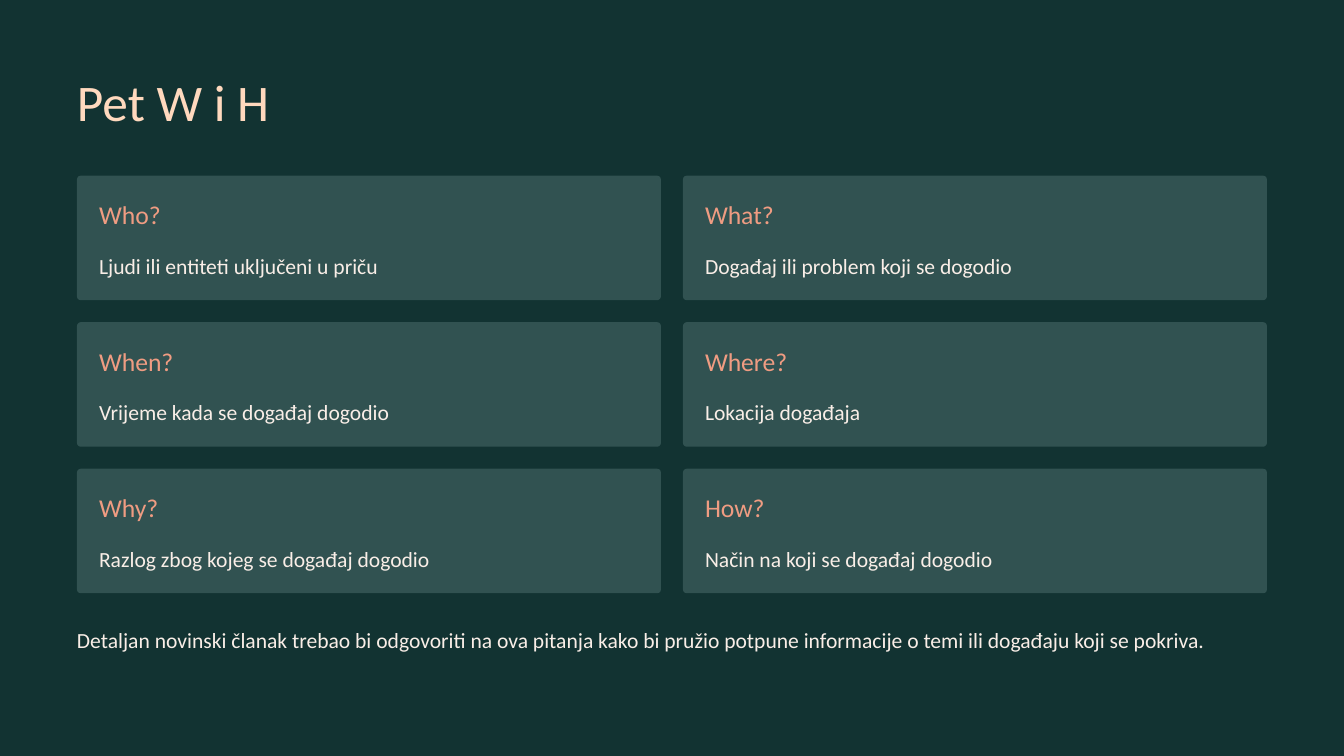
from dataclasses import dataclass

from pptx import Presentation
from pptx.dml.color import RGBColor
from pptx.enum.shapes import MSO_SHAPE
from pptx.enum.text import MSO_ANCHOR, MSO_AUTO_SIZE, PP_ALIGN
from pptx.slide import Slide
from pptx.text.text import TextFrame
from pptx.util import Pt

BACKGROUND = RGBColor(0x12, 0x33, 0x32)
CARD_FILL = RGBColor(0x31, 0x52, 0x51)
PEACH = RGBColor(0xFF, 0xD9, 0xBE)
CORAL = RGBColor(0xEF, 0x9C, 0x82)
CREAM = RGBColor(0xF9, 0xEE, 0xE7)

FONT = "Calibri"
MARGIN = 66
CARDS_TOP = 150.6
CARD_WIDTH, CARD_HEIGHT = 500.5, 106.7
GAP = 18.9
COLUMNS = 2


@dataclass(frozen=True)
class TextStyle:
    size: float
    line: float
    color: RGBColor


@dataclass(frozen=True)
class Card:
    question: str
    answer: str


TITLE = TextStyle(44, 55, PEACH)
HEADING = TextStyle(22, 27.5, CORAL)
BODY = TextStyle(18.5, 30, CREAM)

CARDS = [
    Card("Who?", "Ljudi ili entiteti uključeni u priču"),
    Card("What?", "Događaj ili problem koji se dogodio"),
    Card("When?", "Vrijeme kada se događaj dogodio"),
    Card("Where?", "Lokacija događaja"),
    Card("Why?", "Razlog zbog kojeg se događaj dogodio"),
    Card("How?", "Način na koji se događaj dogodio"),
]
SUMMARY = (
    "Detaljan novinski članak trebao bi odgovoriti na ova pitanja kako bi "
    "pružio potpune informacije o temi ili događaju koji se pokriva."
)


def write_text(tf: TextFrame, text: str, style: TextStyle) -> None:
    tf.margin_left = tf.margin_top = tf.margin_right = tf.margin_bottom = 0
    tf.word_wrap = True
    tf.auto_size = MSO_AUTO_SIZE.NONE
    tf.vertical_anchor = MSO_ANCHOR.TOP
    p = tf.paragraphs[0]
    p.text = text
    p.alignment = PP_ALIGN.LEFT
    p.space_before = Pt(0)
    p.line_spacing = Pt(style.line)
    p.font.name = FONT
    p.font.size = Pt(style.size)
    p.font.color.rgb = style.color


def add_text(s: Slide, left: float, top: float, width: float, height: float,
             text: str, style: TextStyle) -> None:
    box = s.shapes.add_textbox(Pt(left), Pt(top), Pt(width), Pt(height))
    write_text(box.text_frame, text, style)


def add_title(s: Slide, text: str) -> None:
    title = s.shapes.title
    title.left, title.top = Pt(MARGIN), Pt(57.6)
    title.width, title.height = Pt(443.5), Pt(55.4)
    write_text(title.text_frame, text, TITLE)


def add_card(s: Slide, left: float, top: float, card: Card) -> None:
    sp = s.shapes.add_shape(MSO_SHAPE.ROUNDED_RECTANGLE, Pt(left), Pt(top),
                            Pt(CARD_WIDTH), Pt(CARD_HEIGHT))
    sp.adjustments[0] = 0.03
    sp.shadow.inherit = False
    sp.fill.solid()
    sp.fill.fore_color.rgb = CARD_FILL
    sp.line.fill.background()
    text_left = left + GAP
    add_text(s, text_left, top + GAP, 221.8, 27.4, card.question, HEADING)
    add_text(s, text_left, top + 58, CARD_WIDTH - 2 * GAP, 30.2, card.answer, BODY)


def main() -> None:
    prs = Presentation()
    prs.slide_width, prs.slide_height = Pt(1152), Pt(648)
    s = prs.slides.add_slide(prs.slide_layouts[5])
    s.background.fill.solid()
    s.background.fill.fore_color.rgb = BACKGROUND

    add_title(s, "Pet W i H")
    for i, card in enumerate(CARDS):
        row, column = divmod(i, COLUMNS)
        add_card(s, MARGIN + column * (CARD_WIDTH + GAP),
                 CARDS_TOP + row * (CARD_HEIGHT + GAP), card)
    add_text(s, MARGIN, 530, 1020, 60.5, SUMMARY, BODY)

    prs.save("out.pptx")


if __name__ == "__main__":
    main()
